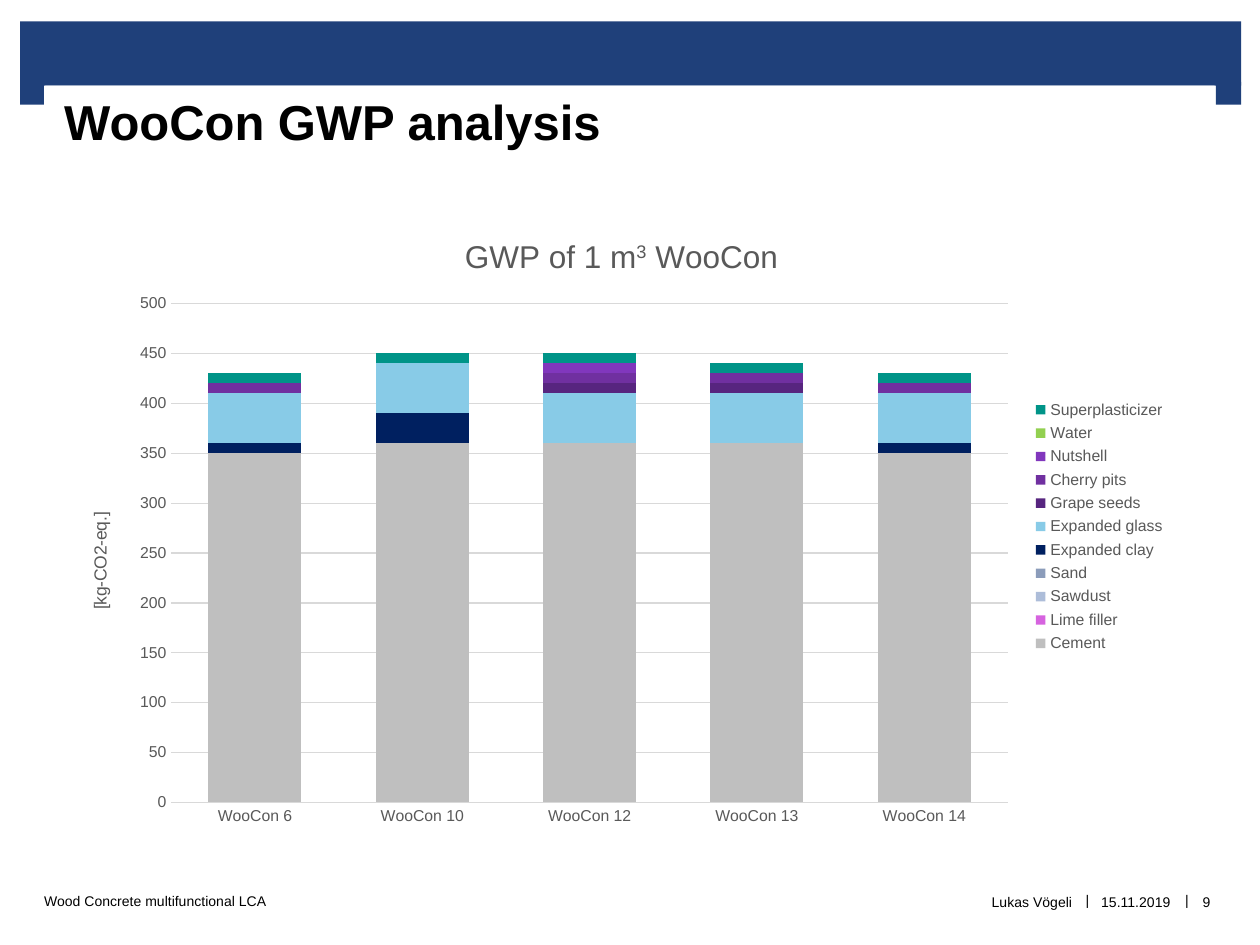
from lxml import etree
from pptx import Presentation
from pptx.chart.data import CategoryChartData
from pptx.dml.color import RGBColor
from pptx.enum.chart import XL_CHART_TYPE, XL_LEGEND_POSITION, XL_TICK_MARK
from pptx.enum.shapes import MSO_SHAPE
from pptx.enum.text import MSO_ANCHOR, PP_ALIGN
from pptx.oxml.ns import qn
from pptx.util import Inches, Pt

BLUE = RGBColor(0x1F, 0x40, 0x7A)
BLACK = RGBColor(0, 0, 0)
WHITE = RGBColor(0xFF, 0xFF, 0xFF)
GREY = RGBColor(0x59, 0x59, 0x59)
LIGHT_GREY = RGBColor(0xD9, 0xD9, 0xD9)
CHART_WIDTH, CHART_HEIGHT = 8.84, 4.95


def add_text(text, left, top, width, height, align, margins=(0, 0, 0, 0),
             anchor=MSO_ANCHOR.MIDDLE, wrap=False, size=8, bold=False):
    box = page.shapes.add_textbox(Inches(left), Inches(top), Inches(width), Inches(height))
    frame = box.text_frame
    frame.word_wrap = wrap
    frame.vertical_anchor = anchor
    for side, margin in zip(("left", "top", "right", "bottom"), margins):
        setattr(frame, f"margin_{side}", Inches(margin))
    para = frame.paragraphs[0]
    para.alignment = align
    span = para.add_run()
    span.text = text
    for name, value in {"name": "Arial", "size": Pt(size), "bold": bold}.items():
        setattr(span.font, name, value)
    span.font.color.rgb = BLACK
    return box


def set_layout(parent, index, x, y, w=None, h=None):
    """Place a chart part, with lengths in inches from the chart's corner."""
    for old in parent.findall(qn("c:layout")):
        parent.remove(old)
    layout = etree.Element(qn("c:layout"))
    manual = etree.SubElement(layout, qn("c:manualLayout"))
    places = {"layoutTarget": "inner"} if index == 0 else {}
    places.update(xMode="edge", yMode="edge", x=x / CHART_WIDTH, y=y / CHART_HEIGHT)
    if w:
        places.update(w=w / CHART_WIDTH, h=h / CHART_HEIGHT)
    for tag, value in places.items():
        etree.SubElement(manual, qn(f"c:{tag}")).set("val", str(value))
    parent.insert(index, layout)


deck = Presentation()
deck.slide_width, deck.slide_height = Inches(10), Inches(7.5)
page = deck.slides.add_slide(deck.slide_layouts[6])

# Header band with a tab at each end
for left, top, width, height in ((0.16, 0.17, 9.69, 0.51), (0.16, 0.65, 0.2, 0.18),
                                 (9.65, 0.65, 0.2, 0.18)):
    band = page.shapes.add_shape(MSO_SHAPE.RECTANGLE, Inches(left), Inches(top),
                                 Inches(width), Inches(height))
    band.shadow.inherit = False
    band.fill.solid()
    band.fill.fore_color.rgb = BLUE
    band.line.fill.background()

# Footer
for left in (9.36, 8.57):
    add_text("|", left, 6.89, 0.12, 0.51, PP_ALIGN.CENTER, (0.04, 0.05, 0.04, 0.05))
add_text("Wood Concrete multifunctional LCA", 0.35, 6.9, 4.65, 0.5, PP_ALIGN.LEFT,
         (0, 0.05, 0, 0.05), wrap=True)
add_text("15.11.2019", 8.68, 6.9, 0.67, 0.51, PP_ALIGN.CENTER)
add_text("Lukas Vögeli", 5, 6.9, 3.51, 0.51, PP_ALIGN.RIGHT)
add_text("9", 9.43, 6.9, 0.29, 0.51, PP_ALIGN.CENTER)

# Title
title = add_text("WooCon GWP analysis", 0.35, 0.68, 9.29, 0.94, PP_ALIGN.LEFT,
                 (0.16, 0.05, 0.16, 0), MSO_ANCHOR.TOP, wrap=True, size=28, bold=True)
title.fill.solid()
title.fill.fore_color.rgb = WHITE

# Chart data, from the bottom of the stack to the top
materials = (
    ("Cement", "BFBFBF", (350, 360, 360, 360, 350)),
    ("Lime filler", "D663DF", (0, 0, 0, 0, 0)),
    ("Sawdust", "ADBDD9", (0, 0, 0, 0, 0)),
    ("Sand", "8B9CBA", (0, None, None, None, None)),
    ("Expanded clay", "002060", (10, 30, None, None, 10)),
    ("Expanded glass", "88CBE7", (50, 50, 50, 50, 50)),
    ("Grape seeds", "57257F", (None, 0, 10, 10, 0)),
    ("Cherry pits", "7030A0", (10, None, 10, 10, 10)),
    ("Nutshell", "8137BD", (None, None, 10, None, None)),
    ("Water", "92D050", (0, 0, 0, 0, 0)),
    ("Superplasticizer", "009488", (10, 10, 10, 10, 10)),
)
data = CategoryChartData(number_format="0")
data.categories = [f"WooCon {number}" for number in (6, 10, 12, 13, 14)]
for name, color, values in materials:
    data.add_series(name, values)
chart = page.shapes.add_chart(XL_CHART_TYPE.COLUMN_STACKED, Inches(0.51), Inches(1.7),
                              Inches(CHART_WIDTH), Inches(CHART_HEIGHT), data).chart
chart.font.name, chart.font.size = "Arial", Pt(10)

plot = chart.plots[0]
plot.gap_width, plot.overlap, plot.vary_by_categories = 80, 100, False
for series, (name, color, values) in zip(plot.series, materials):
    series.format.fill.solid()
    series.format.fill.fore_color.rgb = RGBColor.from_string(color)

# Axes and grid
value_axis, category_axis = chart.value_axis, chart.category_axis
value_axis.minimum_scale, value_axis.maximum_scale, value_axis.major_unit = 0, 500, 50
value_axis.tick_labels.number_format = "0"
value_axis.tick_labels.number_format_is_linked = False
value_axis.has_major_gridlines = True
value_axis.format.line.fill.background()
for line in (value_axis.major_gridlines.format.line, category_axis.format.line):
    line.color.rgb = LIGHT_GREY
    line.width = Pt(0.75)
for axis in (value_axis, category_axis):
    axis.major_tick_mark = axis.minor_tick_mark = XL_TICK_MARK.NONE

# Legend
chart.has_legend = True
legend = chart.legend
legend.position = XL_LEGEND_POSITION.RIGHT
legend.include_in_layout = False
for font in (value_axis.tick_labels.font, category_axis.tick_labels.font, legend.font):
    font.name, font.size = "Arial", Pt(9)
    font.color.rgb = GREY

# Chart title and axis title
chart.has_title = True
chart.chart_title.include_in_layout = False
for heading, size, texts in ((chart.chart_title, 18, ("GWP of 1 m", "3", " WooCon")),
                             (value_axis.axis_title, 10, ("[kg-CO2-eq.]",))):
    para = heading.text_frame.paragraphs[0]
    for text in texts:
        span = para.add_run()
        span.text = text
        for name, value in {"name": "Arial", "size": Pt(size), "bold": False}.items():
            setattr(span.font, name, value)
        span.font.color.rgb = GREY
        if text == "3":
            span.font._element.set("baseline", "30000")
value_axis.axis_title.text_frame._txBody.bodyPr.set("rot", "-5400000")

# Places of the chart parts
set_layout(chart._chartSpace.chart.plotArea, 0, 0.85, 0.71, 6.64, 3.96)
set_layout(legend._element, 1, 7.64, 1.44, 1.15, 2.08)
set_layout(chart.chart_title._element, 1, 3.15, 0.15)
set_layout(value_axis.axis_title._element, 1, 0.17, 2.34)

deck.save("out.pptx")
